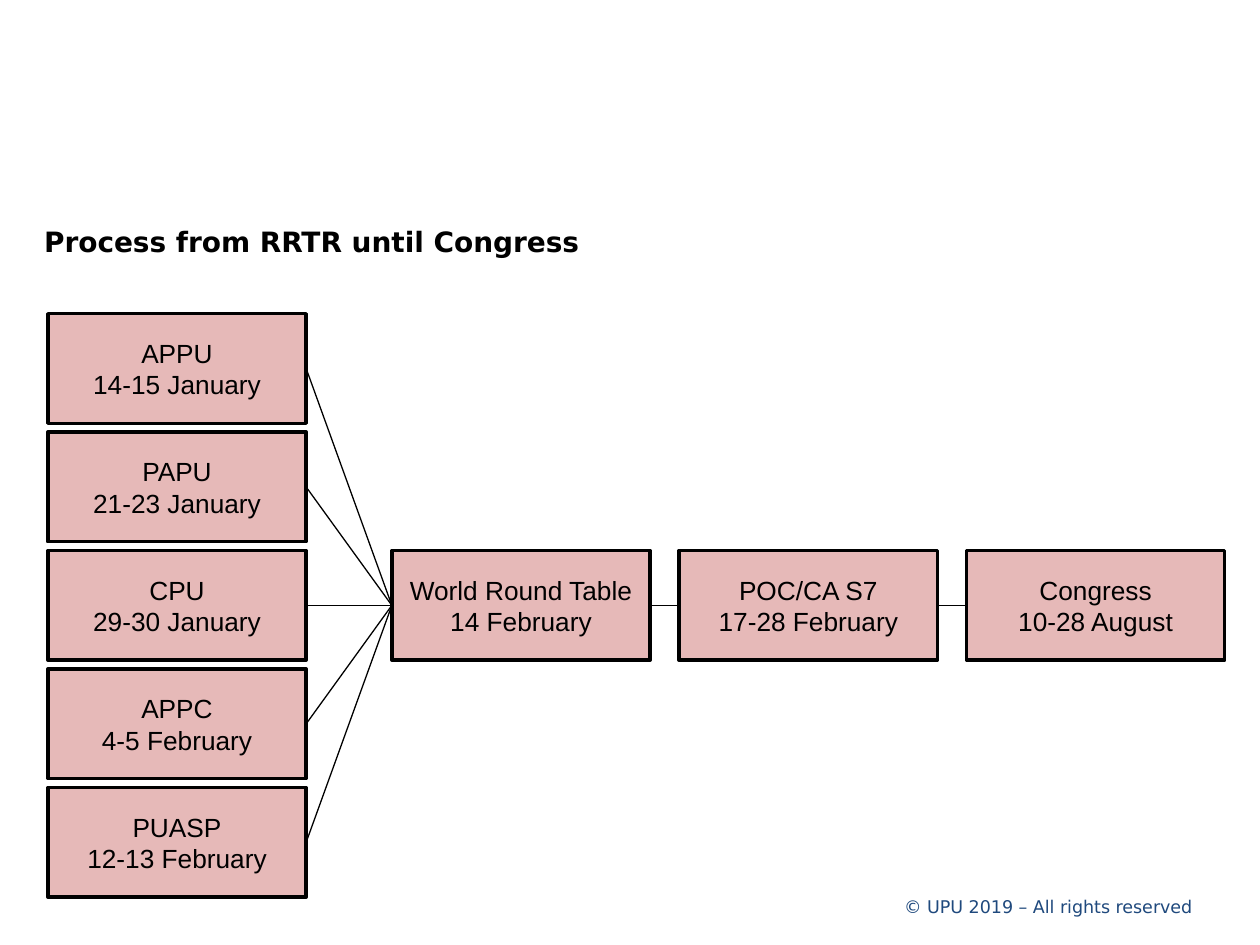
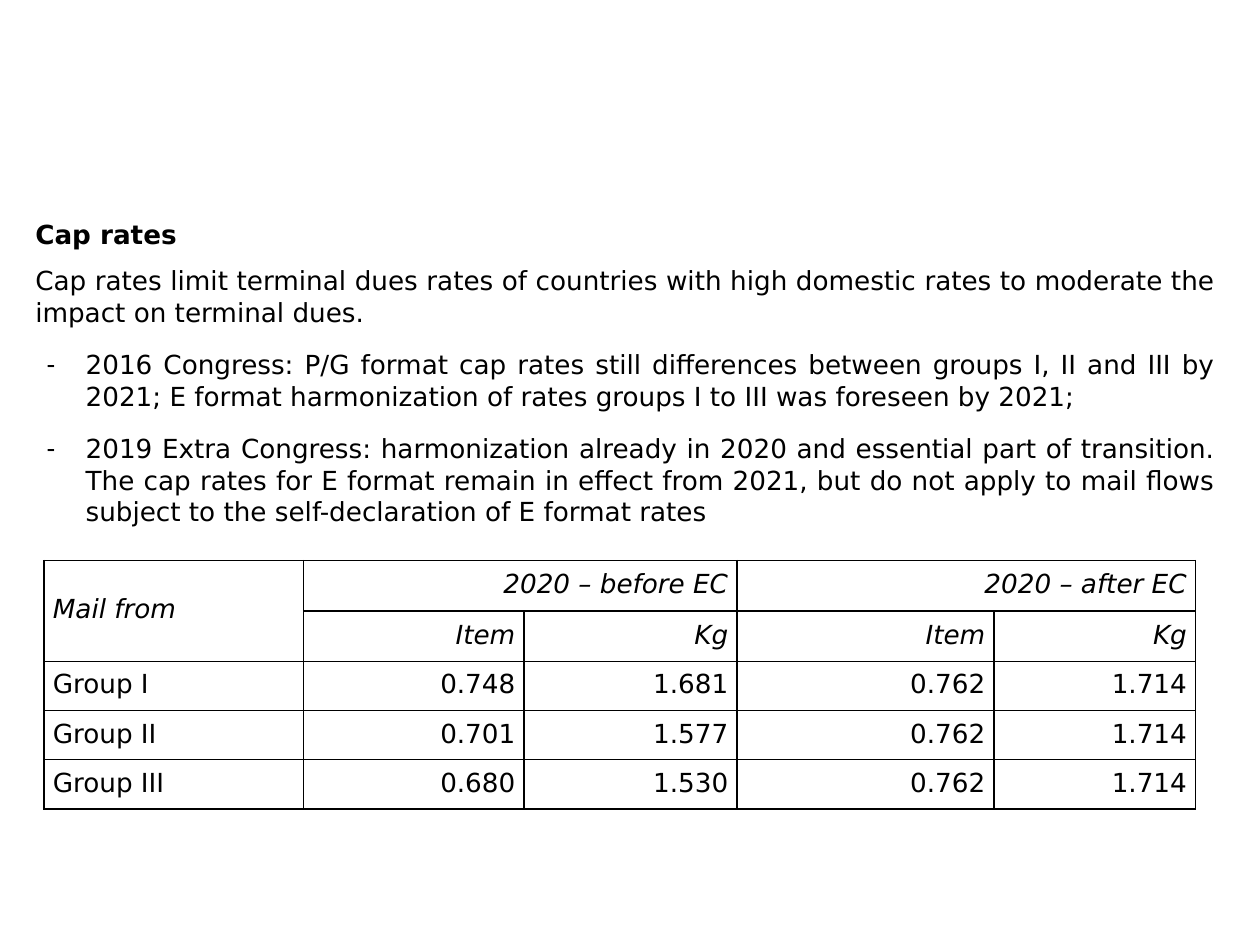
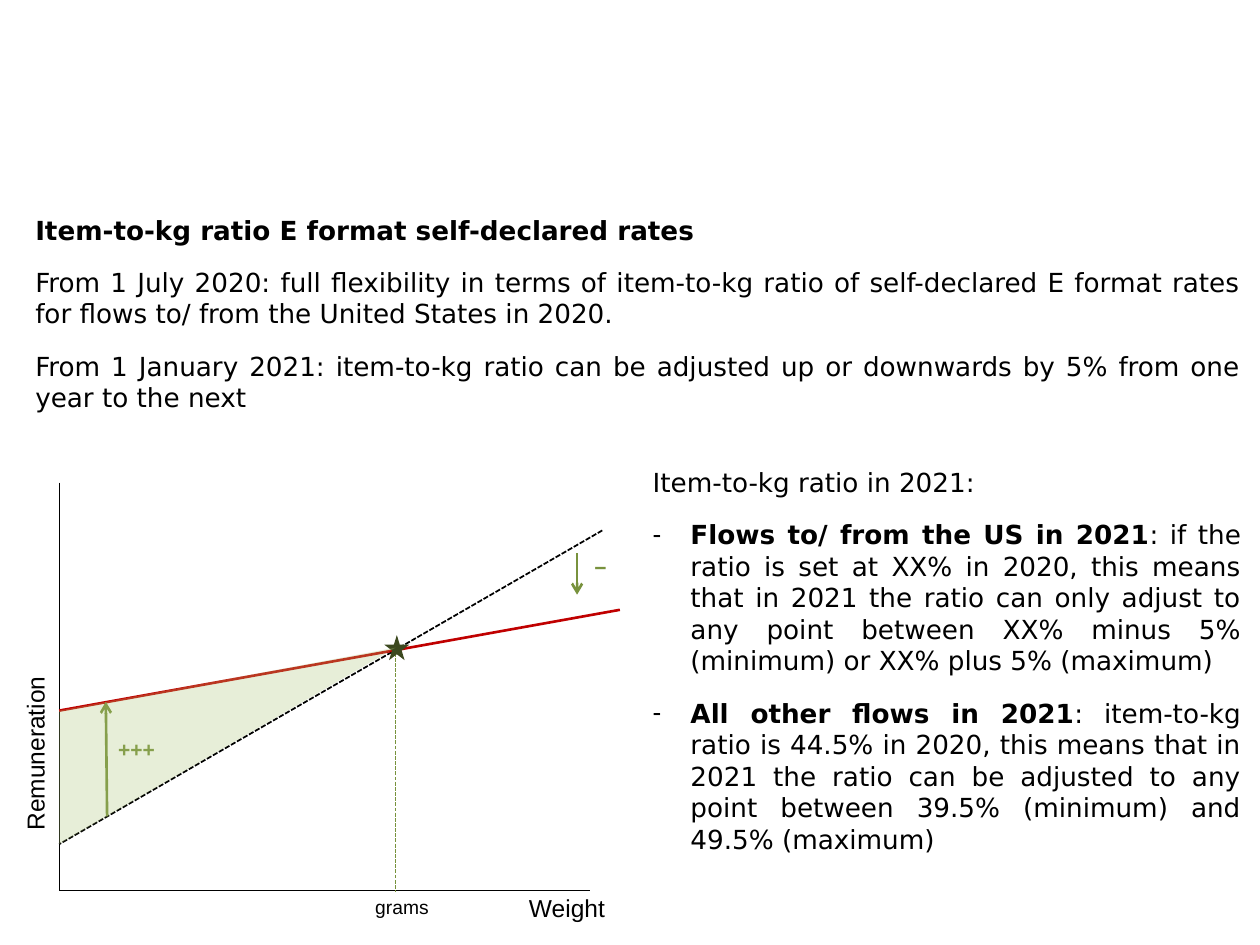
import pptx
import pptx.util
import pptx.dml.color
import pptx.enum.dml
import pptx.enum.shapes
import pptx.enum.text
import pptx.oxml
import pptx.oxml.ns
from lxml import etree
from pptx.util import Inches

SANS, ARIAL = "DejaVu Sans", "Arial"
BLACK, NAVY, ROSE = "000000", "1F497D", "E6B9B8"
RED, GREEN, DARK_GREEN, LIGHT_GREEN = "C00000", "78923D", "3C491F", "ABC473"
TEXT_SIZE = 15
MARGIN = 0.28
TITLE_ONLY, TITLE_AND_CONTENT, TWO_CONTENT = 5, 1, 3
ALIGN = pptx.enum.text.PP_ALIGN
ANCHOR = pptx.enum.text.MSO_ANCHOR
SHAPE = pptx.enum.shapes.MSO_SHAPE
SYS_DASH = pptx.enum.dml.MSO_LINE.SQUARE_DOT

BOX_WIDTH, BOX_HEIGHT = 2.05, 0.87
REGION_LEFT, REGION_TOP, REGION_PITCH = 0.38, 2.49, 0.94
STAGE_LEFT, STAGE_TOP, STAGE_PITCH = 3.11, 4.37, 2.28
REGIONS = [
    ("APPU", "14-15 January"),
    ("PAPU", "21-23 January"),
    ("CPU", "29-30 January"),
    ("APPC", "4-5 February"),
    ("PUASP", "12-13 February"),
]
STAGES = [
    ("World Round Table", "14 February"),
    ("POC/CA S7", "17-28 February"),
    ("Congress", "10-28 August"),
]

CAP_INTRO = ("Cap rates limit terminal dues rates of countries with high domestic rates "
             "to moderate the impact on terminal dues.")
CAP_DECISIONS = [
    "2016 Congress: P/G format cap rates still differences between groups I, II and III "
    "by 2021; E format harmonization of rates groups I to III was foreseen by 2021;",
    "2019 Extra Congress: harmonization already in 2020 and essential part of transition. "
    "The cap rates for E format remain in effect from 2021, but do not apply to mail flows "
    "subject to the self-declaration of E format rates",
]
RATE_COLUMNS = [2.06, 1.75, 1.69, 2.04, 1.6]
RATE_ROWS = [0.4, 0.4, 0.39, 0.39, 0.39]
RATES = [
    ["Mail from", "2020 – before EC", "", "2020 – after EC", ""],
    ["", "Item", "Kg", "Item", "Kg"],
    ["Group I", "0.748", "1.681", "0.762", "1.714"],
    ["Group II", "0.701", "1.577", "0.762", "1.714"],
    ["Group III", "0.680", "1.530", "0.762", "1.714"],
]
RATE_MERGES = [((0, 0), (1, 0)), ((0, 1), (0, 2)), ((0, 3), (0, 4))]

RATIO_RULES = [
    "From 1 July 2020: full flexibility in terms of item-to-kg ratio of self-declared "
    "E format rates for flows to/ from the United States in 2020.",
    "From 1 January 2021: item-to-kg ratio can be adjusted up or downwards by 5% from "
    "one year to the next",
]
RATIO_FLOWS = [
    ("Flows to/ from the US in 2021",
     ": if the ratio is set at XX% in 2020, this means that in 2021 the ratio can only "
     "adjust to any point between XX% minus 5% (minimum) or XX% plus 5% (maximum)"),
    ("All other flows in 2021",
     ": item-to-kg ratio is 44.5% in 2020, this means that in 2021 the ratio can be "
     "adjusted to any point between 39.5% (minimum) and 49.5% (maximum)"),
]


def rgb(color):
    """Turn a hex string into a colour."""
    return pptx.dml.color.RGBColor.from_string(color)


def add_xml(parent, tag, **attributes):
    """Append a drawing element with its attributes."""
    return etree.SubElement(parent, pptx.oxml.ns.qn(tag), attributes)


def style(paragraph, size=TEXT_SIZE, font=SANS, color=BLACK, bold=None, italic=None,
          align=ALIGN.LEFT):
    """Set the alignment and font of a paragraph."""
    paragraph.alignment = align
    paragraph.font.size = pptx.util.Pt(size)
    paragraph.font.name = font
    paragraph.font.bold = bold
    paragraph.font.italic = italic
    paragraph.font.color.rgb = rgb(color)


def place(placeholder, left, top, width, height):
    """Move a placeholder and clear its insets and autofit."""
    placeholder.left, placeholder.top = Inches(left), Inches(top)
    placeholder.width, placeholder.height = Inches(width), Inches(height)
    frame = placeholder.text_frame
    frame.margin_left = frame.margin_right = frame.margin_top = frame.margin_bottom = 0
    frame.vertical_anchor = ANCHOR.TOP
    frame.auto_size = pptx.enum.text.MSO_AUTO_SIZE.NONE
    frame.word_wrap = True
    return frame


def add_slide(deck, layout, title, left, top, size=TEXT_SIZE):
    """Add a slide with its bold title."""
    slide = deck.slides.add_slide(deck.slide_layouts[layout])
    frame = place(slide.shapes.title, left, top, 9.29, 0.31)
    frame.text = title
    style(frame.paragraphs[0], size, bold=True)
    return slide


def fill_body(placeholder, box, items, indent=0.0, hanging=0.0):
    """Write plain strings as paragraphs and (lead, text) pairs as dashed items."""
    frame = place(placeholder, *box)
    for number, item in enumerate(items):
        paragraph = frame.add_paragraph() if number else frame.paragraphs[0]
        paragraph.space_before = pptx.util.Pt(12 if number else 0)
        properties = paragraph._p.get_or_add_pPr()
        if isinstance(item, str):
            properties.set("marL", "0")
            properties.set("indent", "0")
            add_xml(properties, "a:buNone")
            paragraph.add_run().text = item
        else:
            lead, text = item
            properties.set("marL", str(Inches(indent)))
            properties.set("indent", str(-Inches(hanging)))
            add_xml(properties, "a:buChar", char="-")
            if lead:
                lead_run = paragraph.add_run()
                lead_run.text = lead
                lead_run.font.bold = True
            paragraph.add_run().text = text
        style(paragraph, align=ALIGN.JUSTIFY)


def add_label(slide, text, left, top, width, height, rotation=0, wrap=True, **look):
    """Add a one-line text box."""
    label = slide.shapes.add_textbox(Inches(left), Inches(top), Inches(width), Inches(height))
    label.rotation = rotation
    label.text_frame.word_wrap = wrap
    label.text_frame.text = text
    style(label.text_frame.paragraphs[0], **look)


def paint(figure, color):
    """Give a shape a plain fill without outline or shadow."""
    figure.shadow.inherit = False
    figure.fill.solid()
    figure.fill.fore_color.rgb = rgb(color)
    figure.line.fill.background()


def add_figure(slide, kind, left, top, width, height, color):
    """Add a painted preset shape."""
    figure = slide.shapes.add_shape(kind, Inches(left), Inches(top), Inches(width),
                                    Inches(height))
    paint(figure, color)
    return figure


def add_area(slide, corners, color, opacity):
    """Add a translucent polygon through the given corners."""
    start, *others = [(Inches(x), Inches(y)) for x, y in corners]
    outline = slide.shapes.build_freeform(*start)
    outline.add_line_segments(others)
    area = outline.convert_to_shape()
    paint(area, color)
    fill_color = area._element.spPr.find(".//" + pptx.oxml.ns.qn("a:srgbClr"))
    add_xml(fill_color, "a:alpha", val=str(opacity * 1000))


def add_meeting(slide, meeting, left, top):
    """Add an outlined box with the name and dates of a meeting."""
    box = add_figure(slide, SHAPE.RECTANGLE, left, top, BOX_WIDTH, BOX_HEIGHT, ROSE)
    box.line.color.rgb = rgb(BLACK)
    box.line.width = pptx.util.Pt(2)
    box.text_frame.word_wrap = True
    box.text_frame.vertical_anchor = ANCHOR.MIDDLE
    box.text_frame.text = "\n".join(meeting)
    for paragraph in box.text_frame.paragraphs:
        style(paragraph, font=ARIAL, align=ALIGN.CENTER)
    return box


def add_line(slide, start=(0, 0), end=(0, 0), color=BLACK, width=0.75, dash=None, arrow=False):
    """Add a straight line, dashed or with an arrowhead if asked."""
    line = slide.shapes.add_connector(pptx.enum.shapes.MSO_CONNECTOR.STRAIGHT,
                                      *(Inches(value) for value in (*start, *end)))
    line.line.color.rgb = rgb(color)
    line.line.width = pptx.util.Pt(width)
    if dash:
        line.line.dash_style = dash
    if arrow:
        add_xml(line.line._get_or_add_ln(), "a:tailEnd", type="arrow")
    add_xml(line._element.spPr, "a:effectLst")
    return line


def join(slide, earlier, later):
    """Connect the right side of one box to the left side of the next."""
    link = add_line(slide)
    link.begin_connect(earlier, 3)
    link.end_connect(later, 1)


def add_borders(cell):
    """Draw black borders on all sides of a cell."""
    properties = cell._tc.get_or_add_tcPr()
    for position, side in enumerate(("a:lnL", "a:lnR", "a:lnT", "a:lnB")):
        border = add_xml(properties, side, w=str(pptx.util.Pt(1)))
        add_xml(add_xml(border, "a:solidFill"), "a:srgbClr", val=BLACK)
        properties.insert(position, border)


def add_rates_table(slide):
    """Add the table of cap rates."""
    table = slide.shapes.add_table(len(RATE_ROWS), len(RATE_COLUMNS), Inches(0.35),
                                   Inches(4.45), Inches(sum(RATE_COLUMNS)),
                                   Inches(sum(RATE_ROWS))).table
    for column, width in zip(table.columns, RATE_COLUMNS):
        column.width = Inches(width)
    for row, height in zip(table.rows, RATE_ROWS):
        row.height = Inches(height)
    for row_number, row in enumerate(RATES):
        for column_number, text in enumerate(row):
            cell = table.cell(row_number, column_number)
            cell.fill.background()
            cell.margin_left = cell.margin_right = Inches(0.07)
            cell.margin_top = cell.margin_bottom = Inches(0.04)
            cell.vertical_anchor = ANCHOR.MIDDLE
            cell.text = text
            paragraph = cell.text_frame.paragraphs[0]
            paragraph.line_spacing = pptx.util.Pt(16)
            style(paragraph, italic=row_number < 2,
                  align=ALIGN.RIGHT if column_number else ALIGN.LEFT)
            add_borders(cell)
    for first, last in RATE_MERGES:
        table.cell(*first).merge(table.cell(*last))


def add_remuneration_diagram(slide):
    """Draw remuneration against weight for two item-to-kg ratios."""
    origin = (0.47, 7.07)
    flat_start, steep_start = (0.47, 5.64), (0.47, 6.7)
    crossing = (3.14, 5.14)
    add_line(slide, (0.47, 3.83), origin)
    add_line(slide, origin, (4.68, 7.07))
    add_label(slide, "Weight", 4.1, 7.04, 0.93, 0.34, size=14, font=ARIAL)
    add_line(slide, (4.78, 4.21), steep_start, width=1, dash=SYS_DASH)
    add_line(slide, (4.92, 4.84), flat_start, RED, 1.5)
    add_line(slide, crossing, (3.14, 7.08), GREEN, dash=SYS_DASH)
    add_figure(slide, SHAPE.STAR_5_POINT, 3.05, 5.04, 0.2, 0.2, DARK_GREEN)
    add_label(slide, "grams", 2.88, 7.06, 0.7, 0.28, size=11, font=ARIAL)
    add_line(slide, (0.85, 6.48), (0.84, 5.57), GREEN, 1.5, arrow=True)
    add_line(slide, (4.58, 4.39), (4.58, 4.72), GREEN, 1.5, arrow=True)
    for sign, left, top, width in (("+++", 0.84, 5.8, 0.5), ("−", 4.62, 4.35, 0.3)):
        add_label(slide, sign, left, top, width, 0.3, wrap=False, size=12, font=ARIAL,
                  color=GREEN, bold=True)
    add_area(slide, (flat_start, crossing, steep_start), LIGHT_GREEN, 28)
    add_label(slide, "Remuneration", -0.56, 5.81, 1.68, 0.34, rotation=270, size=14,
              font=ARIAL, align=ALIGN.CENTER)


def build_process(deck):
    """Build the slide on the meetings before the Congress."""
    slide = add_slide(deck, TITLE_ONLY, "Process from RRTR until Congress", 0.35, 1.78, 16)
    add_label(slide, "© UPU 2019 – All rights reserved", 6.02, 7.06, 3.54, 0.27, size=10,
              color=NAVY, align=ALIGN.RIGHT)
    regions = [add_meeting(slide, meeting, REGION_LEFT, REGION_TOP + number * REGION_PITCH)
               for number, meeting in enumerate(REGIONS)]
    stages = [add_meeting(slide, meeting, STAGE_LEFT + number * STAGE_PITCH, STAGE_TOP)
              for number, meeting in enumerate(STAGES)]
    for region in regions:
        join(slide, region, stages[0])
    for earlier, later in zip(stages, stages[1:]):
        join(slide, earlier, later)


def build_cap_rates(deck):
    """Build the slide on cap rates."""
    slide = add_slide(deck, TITLE_AND_CONTENT, "Cap rates", MARGIN, 1.73)
    decisions = [("", decision) for decision in CAP_DECISIONS]
    fill_body(slide.placeholders[1], (MARGIN, 2.1, 9.37, 2.3), [CAP_INTRO, *decisions],
              0.4, 0.31)
    add_rates_table(slide)


def build_ratio(deck):
    """Build the slide on the item-to-kg ratio."""
    slide = add_slide(deck, TWO_CONTENT, "Item-to-kg ratio E format self-declared rates",
                      MARGIN, 1.7)
    fill_body(slide.placeholders[1], (MARGIN, 2.11, 9.57, 1.4), RATIO_RULES)
    fill_body(slide.placeholders[2], (5.18, 3.7, 4.67, 3.3),
              ["Item-to-kg ratio in 2021:", *RATIO_FLOWS], 0.3, 0.3)
    add_remuneration_diagram(slide)


def main():
    """Build and save the deck."""
    deck = pptx.Presentation()
    deck.slide_width, deck.slide_height = Inches(10), Inches(7.5)
    build_process(deck)
    build_cap_rates(deck)
    build_ratio(deck)
    deck.save("out.pptx")


if __name__ == "__main__":
    main()
